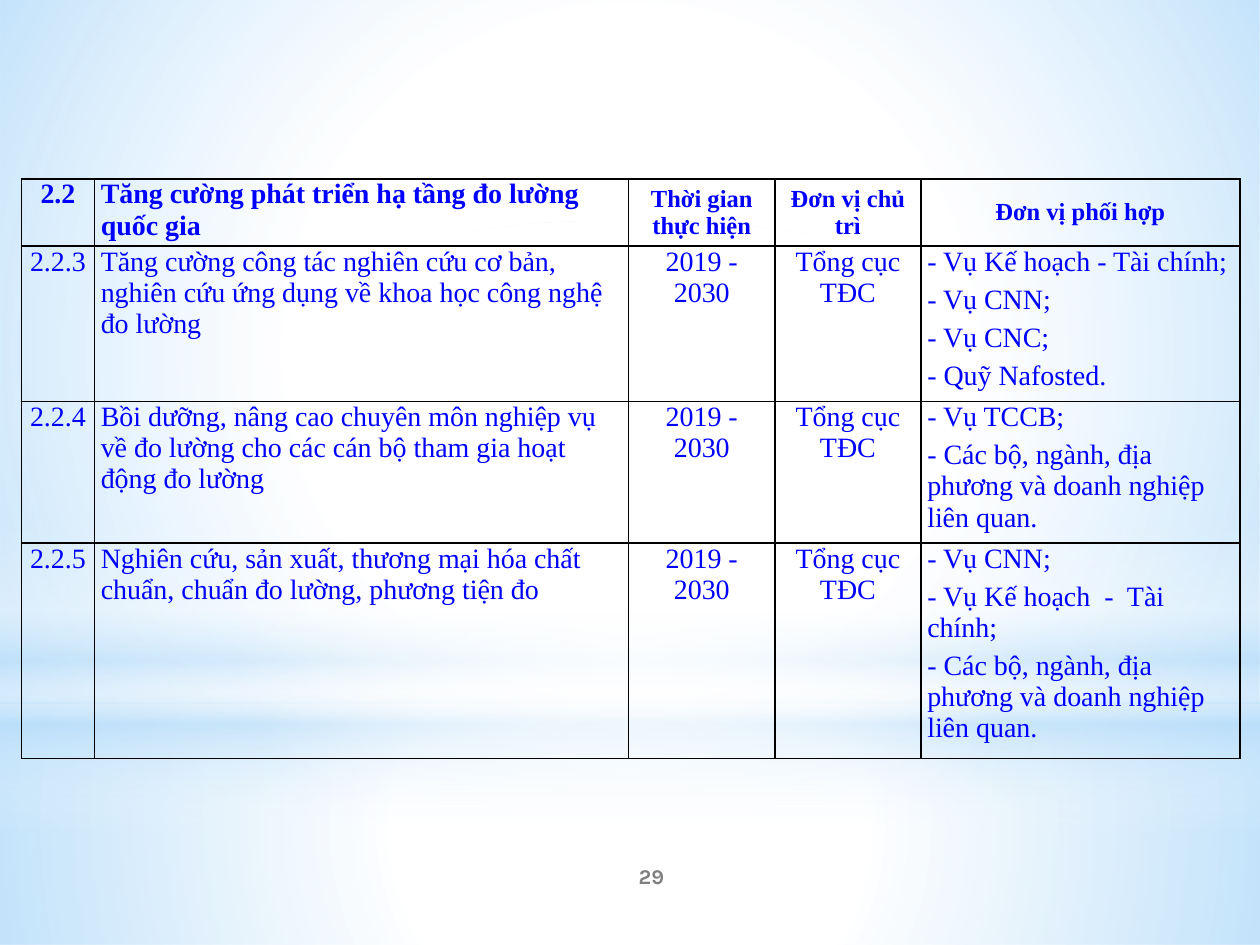
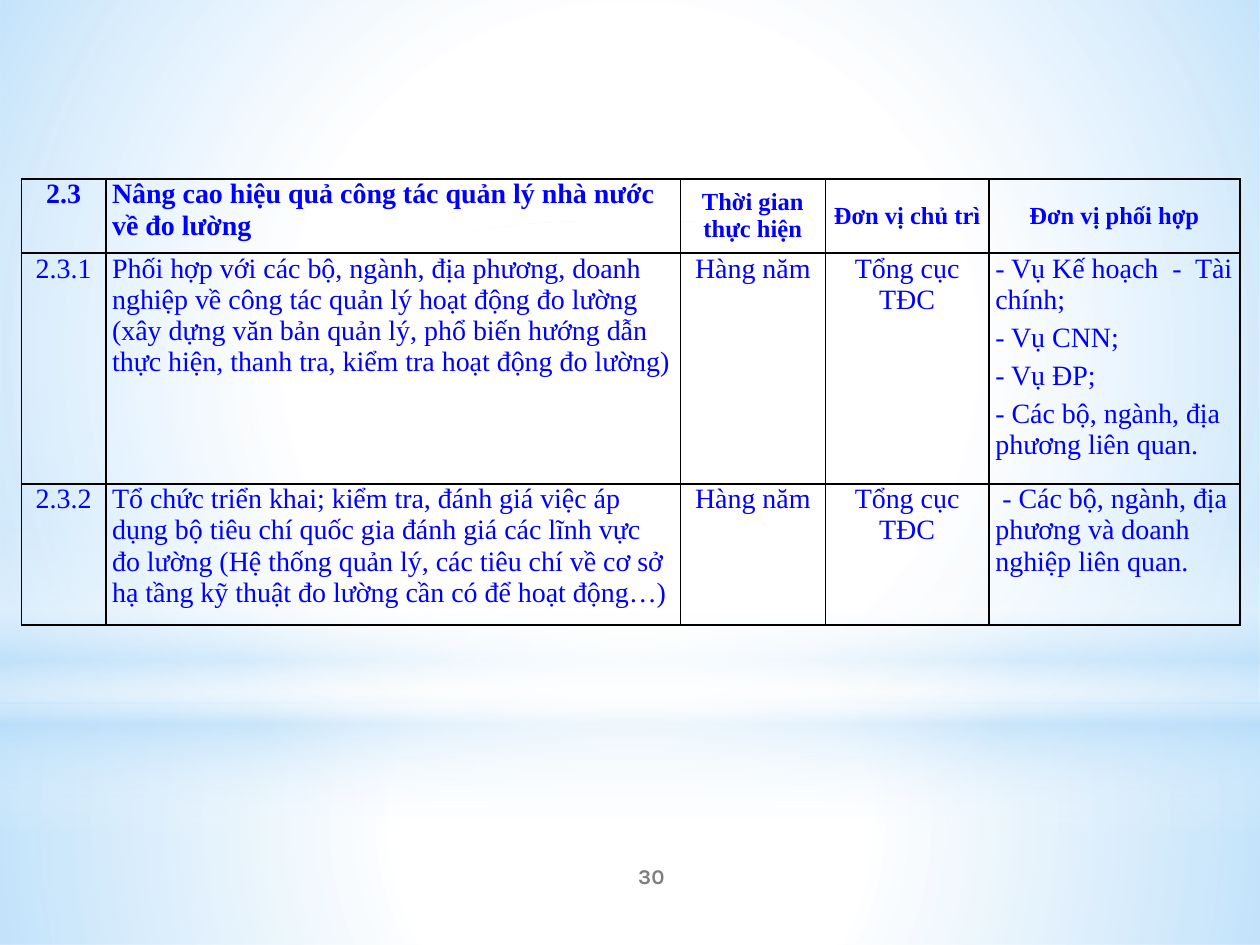
from lxml.etree import SubElement
from pptx import Presentation
from pptx.dml.color import RGBColor as Rgb
from pptx.enum.shapes import MSO_SHAPE as Shape
from pptx.enum.text import MSO_ANCHOR as Anchor, PP_ALIGN as Align
from pptx.oxml import parse_xml
from pptx.oxml.ns import nsdecls, qn
from pptx.util import Inches, Pt

HUES = {"text": "0000FF", "line": "000000", "page": "7F7F7F", "white": "FFFFFF", "sky": "B4DCFA"}
FACE, MARK = "Times New Roman", "Karla"
WIDE, HIGH = 10, 7.5
LEFT, TOP = 0.17, 1.42
HEADS = ["Thời gian thực hiện", "Đơn vị chủ trì", "Đơn vị phối hợp"]
LEAD = "Tổng cục TĐC"
SPAN, YEARLY = "2019 - 2030", "Hàng năm"
FINANCE = "- Vụ Kế hoạch  -  Tài chính;"
ALLIES = "- Các bộ, ngành, địa phương và doanh nghiệp liên quan."

BACK = [
    (Shape.RECTANGLE, 5.58, 1.92, "circle", [(0, "white", 91), (37, "white", 76), (100, "sky", 79)]),
    (Shape.RECTANGLE, 0, 5.58, "circle", [(0, "white", 89), (48, "white", 62), (100, "sky", 79)]),
    (Shape.RECTANGLE, 4.12, 2.5, "down", [(0, "white", 0), (29, "white", 30), (45, "sky", 40),
                                          (55, "white", 26), (65, "sky", 60), (100, "white", 0)]),
    (Shape.OVAL, 1.75, 5.58, "circle", [(0, "white", 100), (56, "white", 0)]),
]

PAGES = [
    {
        "page": "29",
        "cols": [0.58, 4.24, 1.16, 1.16, 2.53],
        "rows": [0.53, 1.23, 1.12, 1.71],
        "head": ["2.2", "Tăng cường phát triển hạ tầng đo lường quốc gia"],
        "when": SPAN,
        "tasks": [
            ("2.2.3", "Tăng cường công tác nghiên cứu cơ bản, nghiên cứu ứng dụng về khoa học công nghệ đo lường",
             ["- Vụ Kế hoạch - Tài chính;", "- Vụ CNN;", "- Vụ CNC;", "- Quỹ Nafosted."]),
            ("2.2.4", "Bồi dưỡng, nâng cao chuyên môn nghiệp vụ về đo lường cho các cán bộ tham gia "
             "hoạt động đo lường", ["- Vụ TCCB;", ALLIES]),
            ("2.2.5", "Nghiên cứu, sản xuất, thương mại hóa chất chuẩn, chuẩn đo lường, phương tiện đo",
             ["- Vụ CNN;", FINANCE, ALLIES]),
        ],
    },
    {
        "page": "30",
        "cols": [0.67, 4.56, 1.15, 1.3, 1.99],
        "rows": [0.59, 1.83, 1.12],
        "head": ["2.3", "Nâng cao hiệu quả công tác quản lý nhà nước về đo lường"],
        "when": YEARLY,
        "tasks": [
            ("2.3.1", "Phối hợp với các bộ, ngành, địa phương, doanh nghiệp về công tác quản lý hoạt động "
             "đo lường (xây dựng văn bản quản lý, phổ biến hướng dẫn thực hiện, thanh tra, kiểm tra "
             "hoạt động đo lường)",
             [FINANCE, "- Vụ CNN;", "- Vụ ĐP;", "- Các bộ, ngành, địa phương liên quan."]),
            ("2.3.2", "Tổ chức triển khai; kiểm tra, đánh giá việc áp dụng bộ tiêu chí quốc gia đánh giá "
             "các lĩnh vực đo lường (Hệ thống quản lý, các tiêu chí về cơ sở hạ tầng kỹ thuật đo lường "
             "cần có để hoạt động…)", [" " + ALLIES]),
        ],
    },
]


def style(font, face, size, hue, bold):
    font.name, font.size, font.bold = face, Pt(size), bold
    font.color.rgb = Rgb.from_string(HUES[hue])


def shade(shape, kind, stops):
    fill = parse_xml(f'<a:gradFill {nsdecls("a")} rotWithShape="1"/>')
    group = SubElement(fill, qn("a:gsLst"))
    for at, hue, alpha in stops:
        stop = SubElement(group, qn("a:gs"), pos=str(at * 1000))
        tint = SubElement(stop, qn("a:srgbClr"), val=HUES[hue])
        SubElement(tint, qn("a:alpha"), val=str(alpha * 1000))
    if kind == "circle":
        ring = SubElement(fill, qn("a:path"), path="circle")
        SubElement(ring, qn("a:fillToRect"), dict.fromkeys("ltrb", "50000"))
    else:
        SubElement(fill, qn("a:lin"), ang="5400000", scaled="0")
    shape._element.spPr.find(qn("a:prstGeom")).addnext(fill)


def draw_back(slide):
    for form, top, high, kind, stops in BACK:
        shape = slide.shapes.add_shape(form, 0, Inches(top), Inches(WIDE), Inches(high))
        shape.shadow.inherit = False
        shape.line.fill.background()
        shade(shape, kind, stops)


def add_page(slide, text):
    box = slide.shapes.add_textbox(Inches(4.17), Inches(6.75), Inches(2), Inches(0.4))
    frame = box.text_frame
    frame.word_wrap, frame.vertical_anchor = True, Anchor.MIDDLE
    par = frame.paragraphs[0]
    par.text, par.alignment = text, Align.CENTER
    style(par.font, MARK, 12, "page", True)


def edge(cell):
    props = cell._tc.get_or_add_tcPr()
    for i, side in enumerate("LRTB"):
        props.insert(i, parse_xml(
            f'<a:ln{side} {nsdecls("a")} w="{Pt(1)}"><a:solidFill>'
            f'<a:srgbClr val="{HUES["line"]}"/></a:solidFill></a:ln{side}>'))


def fill_cell(cell, text, row, col):
    head = row == 0
    label = head and col > 1
    cell.fill.background()
    edge(cell)
    cell.margin_left = cell.margin_right = Inches(0.05)
    cell.margin_top = cell.margin_bottom = 0
    cell.vertical_anchor = Anchor.MIDDLE if label else Anchor.TOP
    lines = text if isinstance(text, list) else [text]
    frame = cell.text_frame
    for i, line in enumerate(lines):
        par = frame.add_paragraph() if i else frame.paragraphs[0]
        par.text = line
        par.alignment = Align.CENTER if label or col in (0, 2, 3) else Align.LEFT
        par.space_before, par.space_after = Pt(2 if i else 0), Pt(2)
        style(par.font, FACE, 14 if label else 16, "text", head)


def add_plan(slide, plan):
    cols, rows = plan["cols"], plan["rows"]
    grid = [plan["head"] + HEADS]
    grid += [[code, task, plan["when"], LEAD, units] for code, task, units in plan["tasks"]]
    table = slide.shapes.add_table(len(rows), len(cols), Inches(LEFT), Inches(TOP),
                                   Inches(sum(cols)), Inches(sum(rows))).table
    table.first_row = table.horz_banding = False
    for col, wide in zip(table.columns, cols):
        col.width = Inches(wide)
    for r, (high, texts) in enumerate(zip(rows, grid)):
        table.rows[r].height = Inches(high)
        for c, text in enumerate(texts):
            fill_cell(table.cell(r, c), text, r, c)


def main():
    """Build the two pages of the task plan."""
    deck = Presentation()
    deck.slide_width, deck.slide_height = Inches(WIDE), Inches(HIGH)
    for plan in PAGES:
        slide = deck.slides.add_slide(deck.slide_layouts[6])
        draw_back(slide)
        add_page(slide, plan["page"])
        add_plan(slide, plan)
    deck.save("out.pptx")


if __name__ == "__main__":
    main()
